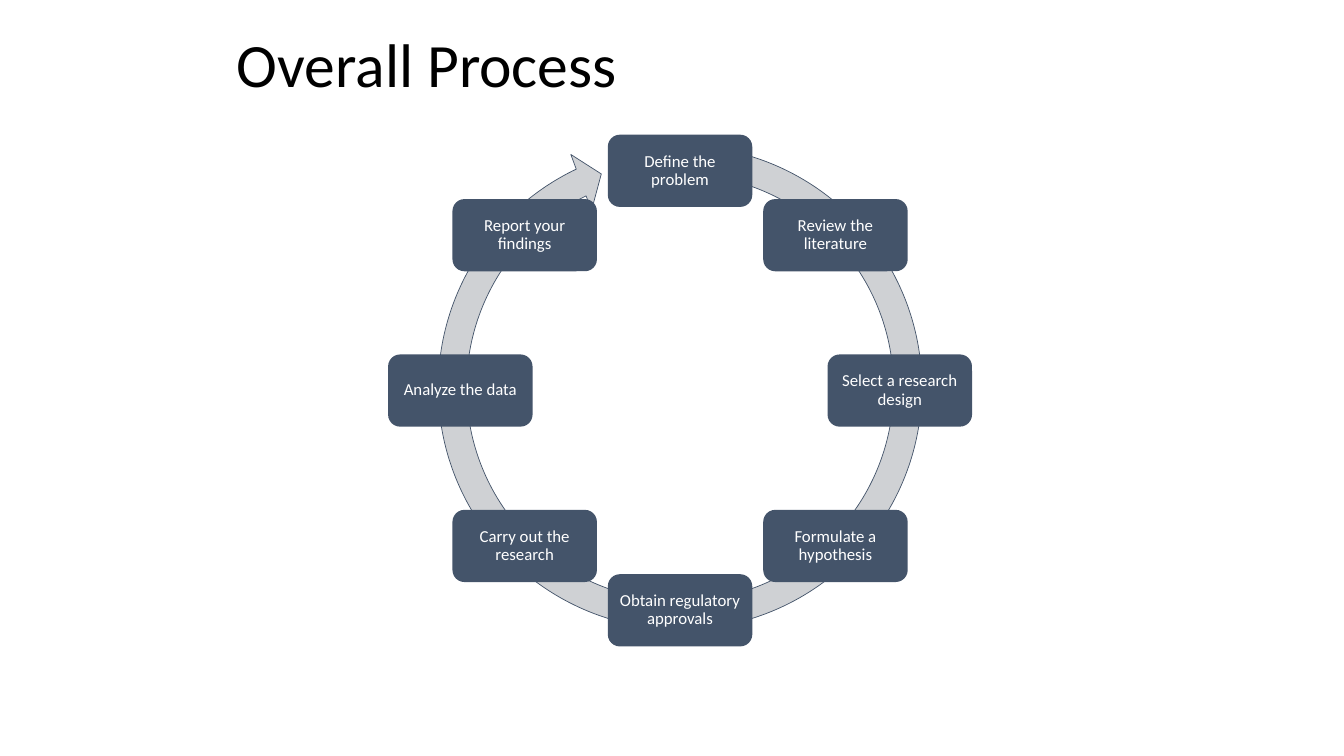
import math

from pptx import Presentation
from pptx import util as u
from pptx.dml.color import RGBColor
from pptx.enum import shapes, text

SLATE = RGBColor(0x44, 0x54, 0x6A)
SILVER = RGBColor(0xCF, 0xD1, 0xD4)
WHITE = RGBColor(0xFF, 0xFF, 0xFF)
BLACK = RGBColor(0, 0, 0)

# Grid of square cells
COLS, ROWS = 80, 45
CELL = u.Inches(7.5) / ROWS

STEPS = [
    "Define the problem",
    "Review the literature",
    "Select a research design",
    "Formulate a hypothesis",
    "Obtain regulatory approvals",
    "Carry out the research",
    "Analyze the data",
    "Report your findings",
]


def cells(*counts):
    return [u.Emu(round(n * CELL)) for n in counts]


class Page:
    font = "Calibri"

    def __init__(self, slide):
        self.items = slide.shapes

    def label(self, shape, words, size, color, align, inset):
        frame = shape.text_frame
        frame.word_wrap = True
        frame.vertical_anchor = text.MSO_ANCHOR.MIDDLE
        frame.margin_left = frame.margin_right = u.Inches(inset)
        frame.margin_top = frame.margin_bottom = u.Inches(0.05)
        para = frame.paragraphs[0]
        para.alignment = align
        para.line_spacing = 0.9
        run = para.add_run()
        run.text = words
        run.font.name = self.font
        run.font.size = u.Pt(size)
        run.font.color.rgb = color

    def title(self, words, left, top, wide, high):
        box = self.items.add_textbox(*cells(left, top, wide, high))
        self.label(box, words, 44, BLACK, text.PP_ALIGN.LEFT, 0.1)

    def shape(self, kind, mid_x, mid_y, wide, high, fill):
        item = self.items.add_shape(
            kind, *cells(mid_x - wide / 2, mid_y - high / 2, wide, high))
        item.shadow.inherit = False
        item.fill.solid()
        item.fill.fore_color.rgb = fill
        item.line.fill.background()
        return item

    def arrow(self, mid_x, mid_y, size, band, head, tip, start, end):
        """Circular arrow; head, end and start are angles in degrees."""
        ring = self.shape(shapes.MSO_SHAPE.CIRCULAR_ARROW,
                          mid_x, mid_y, size, size, SILVER)
        ring.line.color.rgb = SLATE
        ring.line.width = u.Pt(0.5)
        values = [band, head * 0.6, end * 0.6, start * 0.6, tip]
        for i, value in enumerate(values):
            ring.adjustments[i] = value

    def step(self, words, mid_x, mid_y):
        box = self.shape(shapes.MSO_SHAPE.ROUNDED_RECTANGLE,
                         mid_x, mid_y, 8.6, 4.3, SLATE)
        self.label(box, words, 12, WHITE, text.PP_ALIGN.CENTER, 0.08)


def main():
    deck = Presentation()
    deck.slide_width, deck.slide_height = cells(COLS, ROWS)
    page = Page(deck.slides.add_slide(deck.slide_layouts[6]))

    # Title
    page.title("Overall Process", 13.5, 1.26, 54, 5.52)

    # Arrow behind the steps
    mid_x, mid_y, radius = 40.48, 23.25, 13.08
    page.arrow(mid_x, 23.07, 30.66, band=0.055, head=5.51, tip=0.058,
               start=281.18, end=244.26)

    # Steps clockwise from the top
    for i, words in enumerate(STEPS):
        turn = math.tau * i / len(STEPS)
        page.step(words, mid_x + radius * math.sin(turn),
                  mid_y - radius * math.cos(turn))

    deck.save("out.pptx")


if __name__ == "__main__":
    main()
